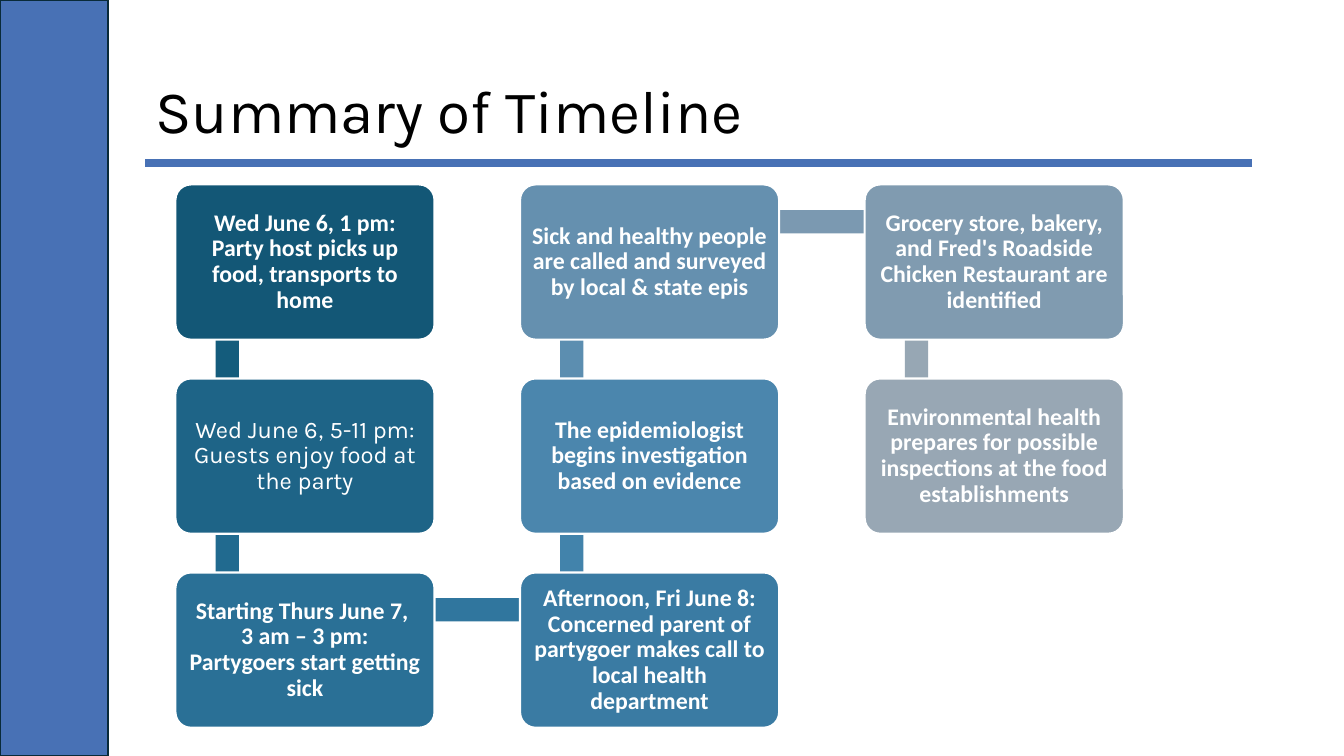
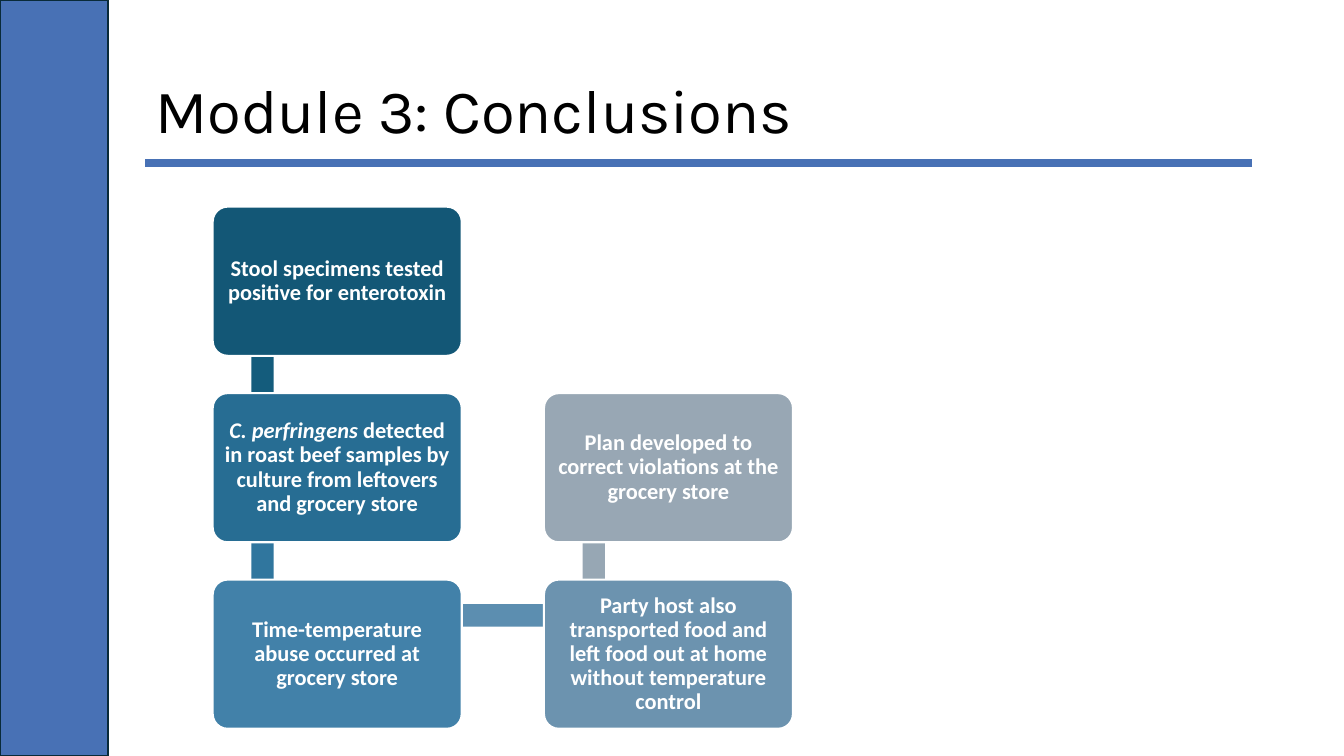
"""Build two slides that show outbreak steps as snaking flows of boxes."""
from lxml import etree
from pptx import Presentation
from pptx.dml.color import RGBColor
from pptx.enum.shapes import MSO_CONNECTOR, MSO_SHAPE
from pptx.enum.text import MSO_ANCHOR, MSO_AUTO_SIZE, PP_ALIGN
from pptx.oxml.ns import qn
from pptx.util import Inches, Pt

RECT, ROUNDED = MSO_SHAPE.RECTANGLE, MSO_SHAPE.ROUNDED_RECTANGLE
STRAIGHT = MSO_CONNECTOR.STRAIGHT
MIDDLE = MSO_ANCHOR.MIDDLE
FIT_SHAPE = MSO_AUTO_SIZE.SHAPE_TO_FIT_TEXT
LEFT, CENTER = PP_ALIGN.LEFT, PP_ALIGN.CENTER

COLORS = {"accent": "4871B5", "edge": "092A39", "title": "000000", "white": "FFFFFF"}
TITLE_FONT, BODY_FONT = "Karla", "Calibri"
TITLE_ONLY = 5
ROWS = 3

TIMELINE = [
    ("135776", "145C7C", ["Wed June 6, 1 pm: Party host picks up food, transports to home"]),
    ("1E6487", "216A8F", [
        ("Wed June 6", {"font": TITLE_FONT, "bold": False}),
        (",", {"bold": False}),
        (" 5-11 pm: Guests enjoy food at the party", {"font": TITLE_FONT, "bold": False}),
    ]),
    ("2A7096", "30769E", ["Starting Thurs June 7, ", "\n",
                          "3 am – 3 pm: Partygoers start getting sick"]),
    ("3A7BA3", "4283AB", ["Afternoon, Fri June 8: Concerned parent of partygoer "
                          "makes call to local health department"]),
    ("4B86AD", "5C8EB0", ["The epidemiologist begins investigation based on evidence"]),
    ("6590AF", "7B99B1", ["Sick and healthy people are called and surveyed "
                          "by local & state epis"]),
    ("809BB0", "97A7B4", ["Grocery store, bakery, and Fred's Roadside "
                          "Chicken Restaurant are identified"]),
    ("98A7B4", None, ["Environmental health prepares for possible inspections "
                      "at the food establishments"]),
]

CONCLUSIONS = [
    ("135776", "145C7C", ["Stool specimens tested positive for enterotoxin"]),
    ("276D93", "30769E", [
        ("C. perfringens ", {"italic": True}),
        "detected in roast beef samples by culture from leftovers and grocery store",
    ]),
    ("4281A9", "5C8EB0", ["Time-temperature abuse occurred at grocery store"]),
    ("6C93AF", "97A7B4", ["Party host also transported food and left food out at home "
                          "without temperature control"]),
    ("98A7B4", None, ["Plan developed to correct violations at the grocery store"]),
]


def rgb(color):
    """Return a colour from a palette name or a hex string."""
    return RGBColor.from_string(COLORS.get(color, color))


def add_run(p, text, size, color, font=BODY_FONT, bold=False, italic=False):
    """Append one formatted run to a paragraph."""
    r = p.add_run()
    r.text = text
    r.font.name, r.font.size = font, Pt(size)
    r.font.bold, r.font.italic = bold, italic
    r.font.color.rgb = rgb(color)


def add_block(shapes, kind, box, fill, line=None):
    """Add a filled preset shape with an optional 1.5 pt outline."""
    sp = shapes.add_shape(kind, *map(Inches, box))
    sp.shadow.inherit = False
    sp.fill.solid()
    sp.fill.fore_color.rgb = rgb(fill)
    if line:
        sp.line.color.rgb = rgb(line)
        sp.line.width = Pt(1.5)
    else:
        sp.line.fill.background()
    return sp


def add_rule(shapes, x1, x2, y):
    """Add the thick horizontal rule under the title."""
    rule = shapes.add_connector(STRAIGHT, Inches(x1), Inches(y), Inches(x2), Inches(y))
    rule.line.color.rgb = rgb("accent")
    rule.line.width = Pt(6)
    etree.SubElement(rule.element.spPr, qn("a:effectLst"))


def add_titled_slide(prs, title, size, box):
    """Add a slide with the side band, the rule and a title."""
    s = prs.slides.add_slide(prs.slide_layouts[TITLE_ONLY])
    add_block(s.shapes, RECT, (0, 0, 1.07, 7.5), "accent", "edge")
    add_rule(s.shapes, 1.44, 12.42, 1.62)
    sp = s.shapes.title
    sp.left, sp.top, sp.width, sp.height = map(Inches, box)
    tf = sp.text_frame
    tf.word_wrap = True
    tf.auto_size = FIT_SHAPE
    tf.vertical_anchor = MIDDLE
    p = tf.paragraphs[0]
    p.alignment, p.line_spacing = LEFT, 0.9
    add_run(p, title, size, "title", TITLE_FONT)
    return s


def add_step(shapes, box, fill, runs, size):
    """Add one rounded step box with centred text."""
    sp = add_block(shapes, ROUNDED, box, fill, "white")
    sp.adjustments[0] = 0.1
    tf = sp.text_frame
    tf.word_wrap = True
    tf.vertical_anchor = MIDDLE
    tf.margin_left = tf.margin_right = tf.margin_top = tf.margin_bottom = Inches(0.07)
    p = tf.paragraphs[0]
    p.alignment, p.line_spacing = CENTER, 0.9
    for run in runs:
        if run == "\n":
            p.add_line_break()
            continue
        text, style = (run, {}) if isinstance(run, str) else run
        add_run(p, text, size, "white", **{"bold": True, **style})


def add_link(shapes, start, end, thickness, fill):
    """Add a straight bar between two anchor points."""
    (x1, y1), (x2, y2) = start, end
    half = thickness / 2
    if x1 == x2:
        box = (x1 - half, min(y1, y2), thickness, abs(y2 - y1))
    else:
        box = (x1, y1 - half, x2 - x1, thickness)
    add_block(shapes, RECT, box, fill)


def add_snake(s, steps, left, top, width, height, size):
    """Lay steps out in columns that run down and up in turn, linked by bars."""
    shapes = s.shapes.add_group_shape().shapes
    corners = []
    for i in range(len(steps)):
        col, row = divmod(i, ROWS)
        if col % 2:
            row = ROWS - 1 - row
        corners.append((left + col * width * 1.33, top + row * height * 1.25))
    anchors = [(x + 0.2 * width, y + 0.24 * height) for x, y in corners]
    for i, (fill, link, runs) in enumerate(steps):
        if link:
            add_link(shapes, anchors[i], anchors[i + 1], 0.09 * width, link)
        add_step(shapes, (*corners[i], width, height), fill, runs, size)


def main():
    """Build and save the presentation."""
    prs = Presentation()
    prs.slide_width, prs.slide_height = Inches(13.33), Inches(7.5)
    s = add_titled_slide(prs, "Summary of Timeline", 43, (1.44, 0.75, 11.39, 0.76))
    add_snake(s, TIMELINE, 1.74, 1.83, 2.57, 1.54, 17)
    s = add_titled_slide(prs, "Module 3: Conclusions", 44, (1.44, 0.74, 10.98, 0.77))
    add_snake(s, CONCLUSIONS, 2.11, 2.05, 2.47, 1.48, 16)
    prs.save("out.pptx")


if __name__ == "__main__":
    main()
